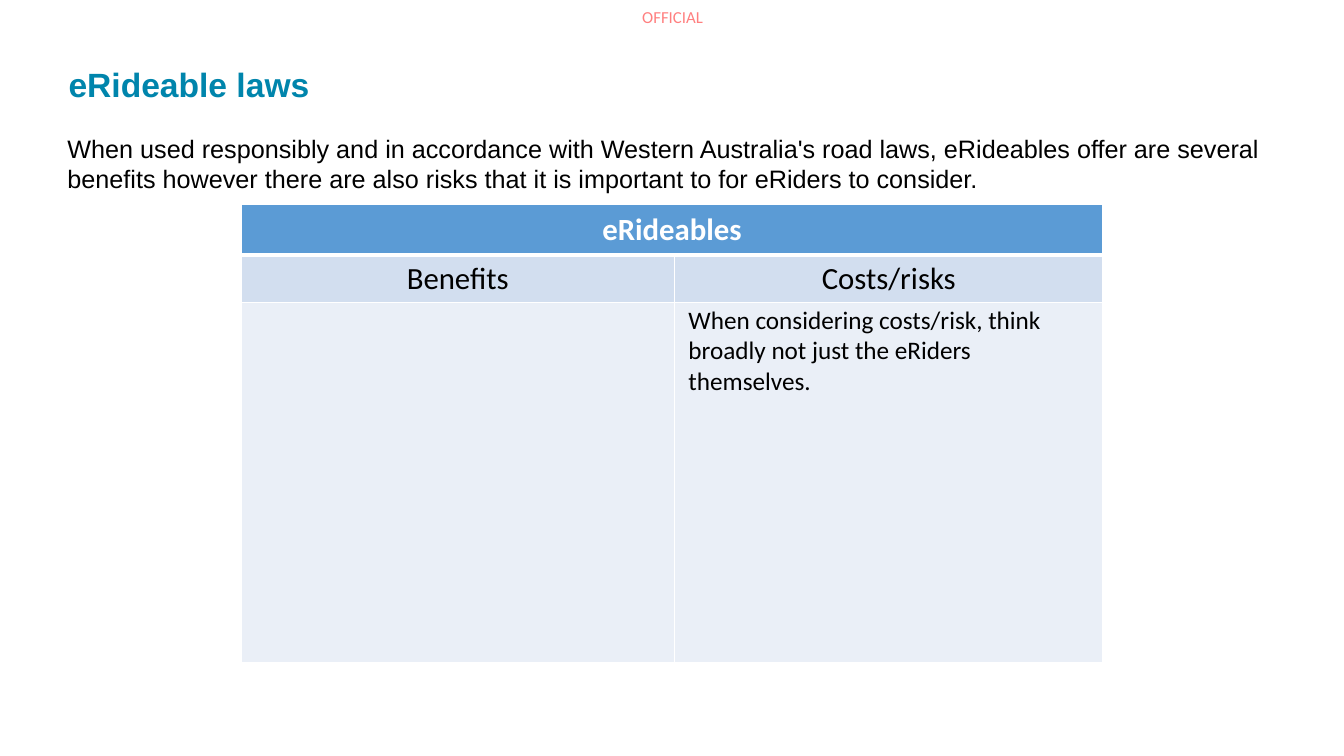
import lxml.etree
import pptx
import pptx.dml.color
import pptx.enum.text
import pptx.oxml
import pptx.oxml.ns
import pptx.util

Inches = pptx.util.Inches
Pt = pptx.util.Pt
ALIGN = pptx.enum.text.PP_ALIGN
MIDDLE = pptx.enum.text.MSO_ANCHOR.MIDDLE

COLORS = {
    "white": "FFFFFF",
    "black": "000000",
    "marking": "FF0000",
    "title": "0085AC",
    "header": "5B9BD5",
    "subheader": "D2DEEF",
    "body": "EAEFF7",
}


def rgb(name):
    return pptx.dml.color.RGBColor.from_string(COLORS[name])


class SlideBuilder:
    """Holds the text style and the current slide, and adds its elements."""

    def __init__(self, slide):
        self.slide = slide
        self.style = {"name": "Calibri", "size": Pt(18), "bold": False}

    def fill_text(self, frame, text, color="black", alpha=None, layout=None, **font):
        para = frame.paragraphs[0]
        for key, value in (layout or {}).items():
            setattr(para, key, value)
        span = para.add_run()
        span.text = text
        for key, value in {**self.style, **font}.items():
            setattr(span.font, key, value)
        span.font.color.rgb = rgb(color)
        if alpha is not None:
            tint = next(span._r.iter(pptx.oxml.ns.qn("a:srgbClr")))
            lxml.etree.SubElement(tint, pptx.oxml.ns.qn("a:alpha"), val=str(alpha * 1000))

    def text(self, place, text, inset=True, wrap=True, **format_values):
        box = self.slide.shapes.add_textbox(*map(Inches, place))
        frame = box.text_frame
        frame.word_wrap = wrap
        if not inset:
            for side in ("left", "top", "right", "bottom"):
                setattr(frame, f"margin_{side}", 0)
        self.fill_text(frame, text, **format_values)

    def borders(self, cell, widths):
        properties = cell._tc.get_or_add_tcPr()
        for index, (side, width) in enumerate(widths.items()):
            line = pptx.oxml.parse_xml(
                f'<a:ln{side} {pptx.oxml.ns.nsdecls("a")} w="{Pt(width)}"><a:solidFill>'
                f'<a:srgbClr val="{COLORS["white"]}"/></a:solidFill></a:ln{side}>'
            )
            properties.insert(index, line)

    def table(self, place, columns, rows):
        shape = self.slide.shapes.add_table(len(rows), len(columns), *map(Inches, place))
        table = shape.table
        for column, width in zip(table.columns, columns):
            column.width = Inches(width)
        for index, (height, color, labels, font) in enumerate(rows):
            table.rows[index].height = Inches(height)
            widths = {"L": 1, "R": 1, "T": 3 if index == 1 else 1, "B": 3 if index == 0 else 1}
            for position in range(len(columns)):
                cell = table.cell(index, position)
                cell.fill.solid()
                cell.fill.fore_color.rgb = rgb(color)
                self.borders(cell, widths)
                if position < len(labels):
                    cell.vertical_anchor = MIDDLE
                    self.fill_text(cell.text_frame, labels[position],
                                   layout={"alignment": ALIGN.CENTER}, **font)
        table.cell(0, 0).merge(table.cell(0, len(columns) - 1))


def main():
    deck = pptx.Presentation()
    deck.slide_width, deck.slide_height = Inches(13.33), Inches(7.5)
    page = SlideBuilder(deck.slides.add_slide(deck.slide_layouts[6]))

    page.text((6.37, 0.07, 0.64, 0.2), "OFFICIAL", inset=False, wrap=False,
              color="marking", alpha=50, size=Pt(12))
    page.table((2.39, 2.03, 8.55, 4.54), (4.3, 4.25), (
        (0.5, "header", ("eRideables",), {"size": Pt(22), "bold": True, "color": "white"}),
        (0.47, "subheader", ("Benefits", "Costs/risks"), {"size": Pt(22)}),
        (3.57, "body", (), {}),
    ))
    page.text((0.68, 0.68, 11.97, 0.59), "eRideable laws", inset=False, color="title",
              name="Arial", size=Pt(24), bold=True, layout={"line_spacing": 0.9})
    page.text((0.57, 1.27, 12.08, 0.71),
              "When used responsibly and in accordance with Western Australia's road laws, "
              "eRideables offer are several benefits however there are also risks that it is "
              "important to for eRiders to consider.", name="Arial")
    page.text((6.73, 2.97, 4.11, 1.01),
              "When considering costs/risk, think broadly not just the eRiders themselves.")

    deck.save("out.pptx")


if __name__ == "__main__":
    main()
